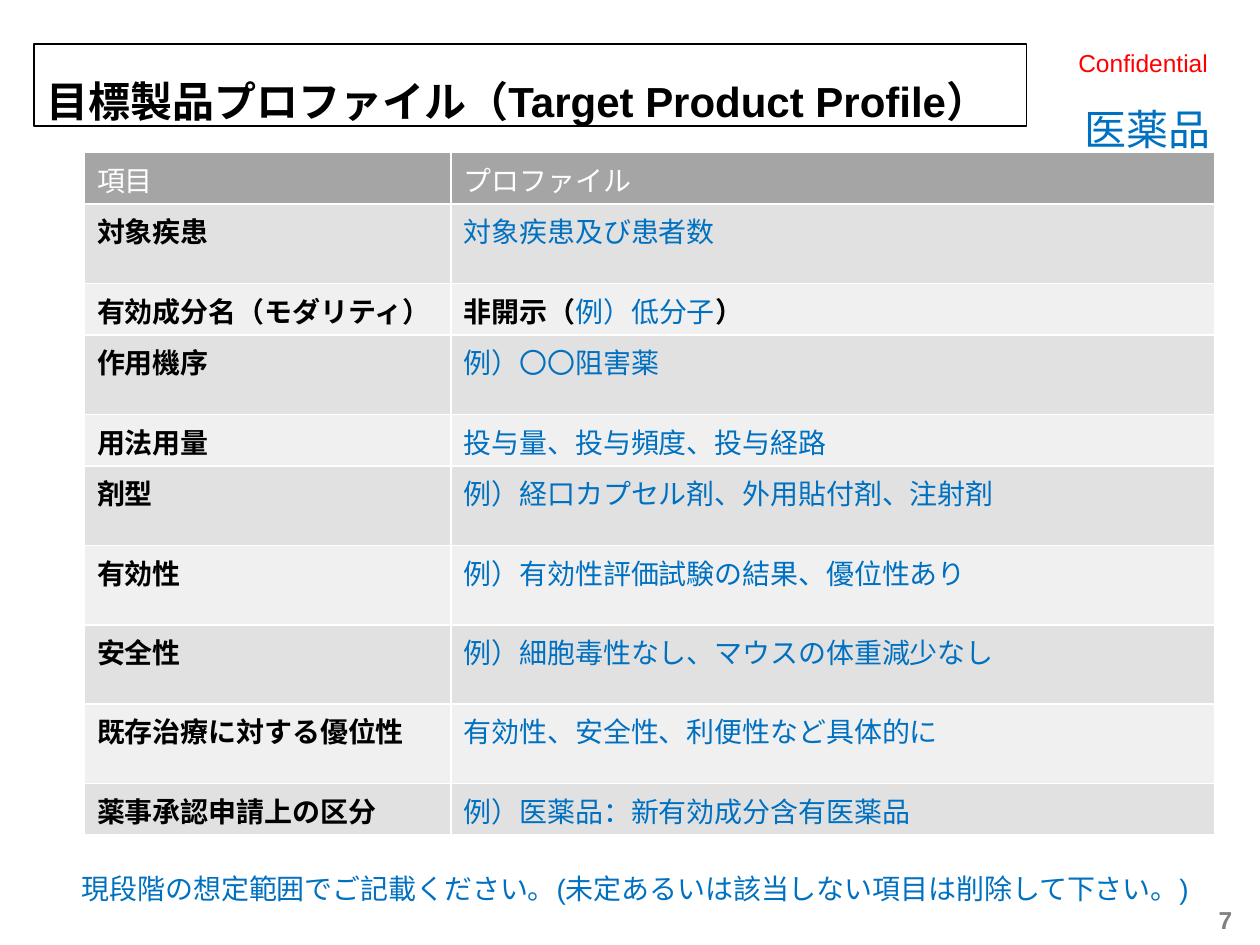
from pptx import Presentation
from pptx.dml.color import RGBColor as Rgb
from pptx.enum.shapes import MSO_SHAPE as Shape
from pptx.enum.text import MSO_ANCHOR as Anchor, MSO_AUTO_SIZE as Auto, PP_ALIGN as Align
from pptx.oxml import parse_xml
from pptx.util import Inches, Pt

HUES = {"black": "000000", "white": "FFFFFF", "red": "FF0000", "blue": "0070C0",
        "gray": "808080", "head": "A5A5A5", "dark": "E1E1E1", "light": "F0F0F0"}
NS = "http://schemas.openxmlformats.org/drawingml/2006/main"
LOW, TALL = 0.41, 0.63
ROWS = [
    ("対象疾患", "対象疾患及び患者数", TALL),
    ("有効成分名（モダリティ）", [("非開示（", "key"), ("例）低分子", "note"), ("）", "key")], LOW),
    ("作用機序", "例）〇〇阻害薬", TALL),
    ("用法用量", "投与量、投与頻度、投与経路", LOW),
    ("剤型", "例）経口カプセル剤、外用貼付剤、注射剤", TALL),
    ("有効性", "例）有効性評価試験の結果、優位性あり", TALL),
    ("安全性", "例）細胞毒性なし、マウスの体重減少なし", TALL),
    ("既存治療に対する優位性", "有効性、安全性、利便性など具体的に", TALL),
    ("薬事承認申請上の区分", "例）医薬品：新有効成分含有医薬品", LOW),
]


class Deck:
    """Holds the text styles and the current slide."""

    styles = {
        "title": ("black", {"name": "Arial", "size": Pt(24), "bold": True}),
        "kind": ("blue", {"name": "Arial", "size": Pt(24), "bold": False}),
        "mark": ("red", {"name": "Arial", "size": Pt(14), "bold": False}),
        "hint": ("blue", {"name": "Arial", "size": Pt(16), "bold": False}),
        "page": ("gray", {"name": "Arial", "size": Pt(14), "bold": True}),
        "head": ("white", {"name": "Calibri", "size": Pt(16), "bold": False}),
        "key": ("black", {"name": "Calibri", "size": Pt(16), "bold": True}),
        "note": ("blue", {"name": "Calibri", "size": Pt(16), "bold": False}),
    }

    def __init__(self):
        self.prs = Presentation()
        self.prs.slide_width, self.prs.slide_height = Inches(10), Inches(7.5)
        self.slide = self.prs.slides.add_slide(self.prs.slide_layouts[6])

    def color(self, hue):
        return Rgb.from_string(HUES[hue])

    def fill_text(self, frame, text, style, **form):
        para = frame.paragraphs[0]
        for name, value in form.items():
            setattr(para, name, value)
        for part, look in [(text, style)] if isinstance(text, str) else text:
            run = para.add_run()
            run.text = part
            hue, font = self.styles[look]
            for name, value in font.items():
                setattr(run.font, name, value)
            run.font.color.rgb = self.color(hue)

    def text(self, box, text, style, frame=None, **form):
        item = self.slide.shapes.add_textbox(*map(Inches, box))
        for name, value in ({"word_wrap": True} | (frame or {})).items():
            setattr(item.text_frame, name, value)
        self.fill_text(item.text_frame, text, style, **form)

    def panel(self, box, text, style, **form):
        item = self.slide.shapes.add_shape(Shape.RECTANGLE, *map(Inches, box))
        item.shadow.inherit = False
        item.fill.background()
        item.line.color.rgb = self.color("black")
        item.line.width = Pt(0.75)
        frame = {"word_wrap": False, "auto_size": Auto.SHAPE_TO_FIT_TEXT,
                 "vertical_anchor": Anchor.TOP}
        for name, value in frame.items():
            setattr(item.text_frame, name, value)
        self.fill_text(item.text_frame, text, style, **form)

    def cell(self, cell, text, style, fill):
        props = cell._tc.get_or_add_tcPr()
        for side in "LRTB":
            props.append(parse_xml(
                f'<a:ln{side} xmlns:a="{NS}" w="12700"><a:solidFill>'
                f'<a:srgbClr val="{HUES["white"]}"/></a:solidFill></a:ln{side}>'))
        cell.fill.solid()
        cell.fill.fore_color.rgb = self.color(fill)
        self.fill_text(cell.text_frame, text, style)

    def table(self, left, top, widths, heads, rows):
        tall = [LOW] + [row[-1] for row in rows]
        box = left, top, sum(widths), sum(tall)
        grid = self.slide.shapes.add_table(len(tall), len(widths), *map(Inches, box)).table
        for col, width in zip(grid.columns, widths):
            col.width = Inches(width)
        for row, height in zip(grid.rows, tall):
            row.height = Inches(height)
        for c, head in enumerate(heads):
            self.cell(grid.cell(0, c), head, "head", "head")
        for r, (key, note, _) in enumerate(rows, 1):
            fill = "dark" if r % 2 else "light"
            self.cell(grid.cell(r, 0), key, "key", fill)
            self.cell(grid.cell(r, 1), note, "note", fill)


def main():
    deck = Deck()
    grow = {"auto_size": Auto.SHAPE_TO_FIT_TEXT}
    deck.text((9.45, 7.1, 0.55, 0.4), "7", "page",
              {"vertical_anchor": Anchor.MIDDLE}, alignment=Align.CENTER)
    deck.text((8.46, 0.33, 1.26, 0.34), "Confidential", "mark", grow)
    deck.panel((0.27, 0.35, 7.88, 0.65), "目標製品プロファイル（Target Product Profile）",
               "title", alignment=Align.LEFT, line_spacing=1.5)
    deck.table(0.67, 1.21, (2.91, 6.06), ("項目", "プロファイル"), ROWS)
    deck.text((8.51, 0.57, 1.21, 0.65), "医薬品", "kind",
              grow | {"word_wrap": False}, line_spacing=1.5)
    deck.text((0.55, 6.87, 9.21, 0.37),
              "現段階の想定範囲でご記載ください。(未定あるいは該当しない項目は削除して下さい。)",
              "hint", grow)
    deck.prs.save("out.pptx")


if __name__ == "__main__":
    main()
